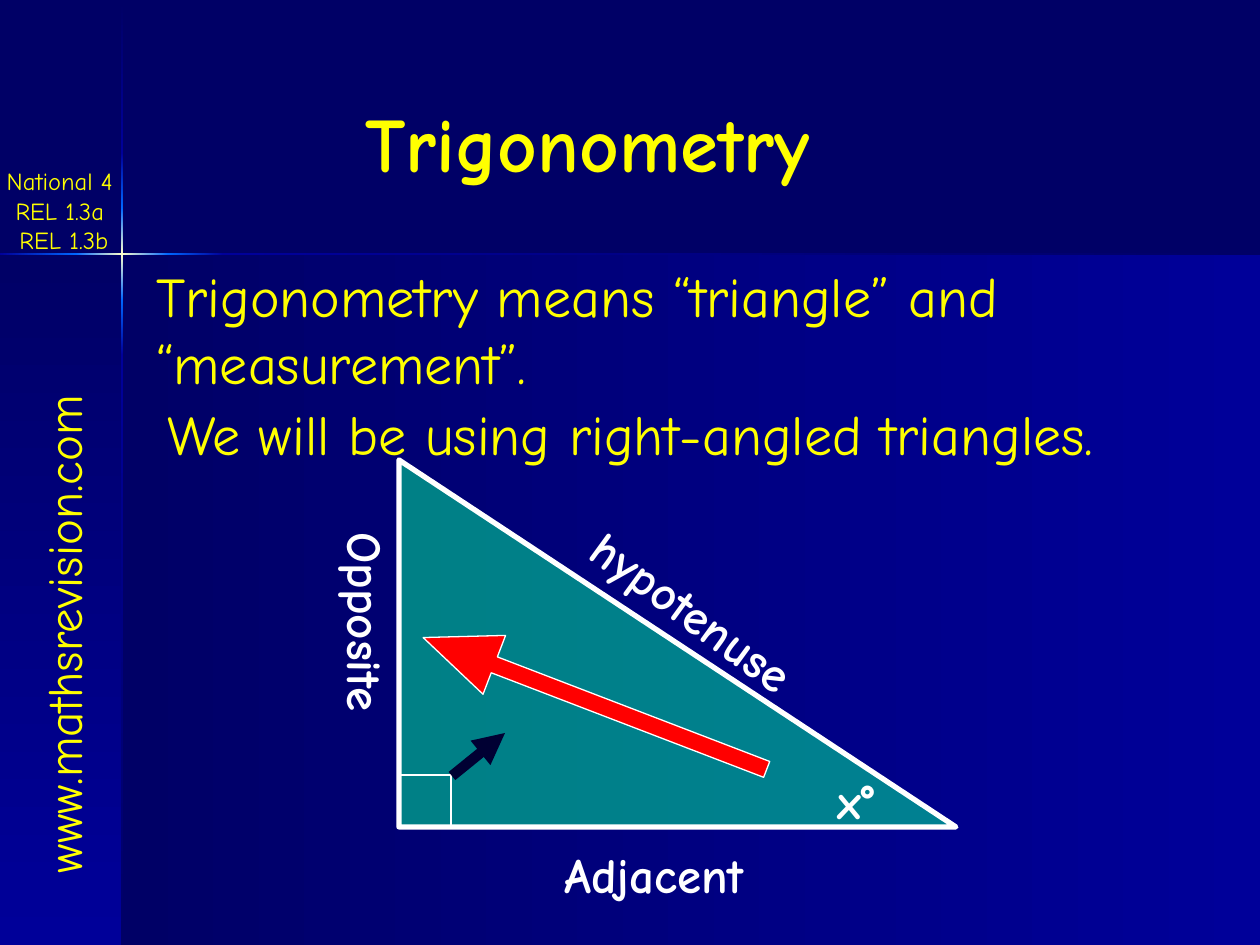
import copy

import pptx
import pptx.dml.color
import pptx.enum.shapes
import pptx.enum.text
import pptx.oxml
import pptx.oxml.ns
import pptx.util

EMU_PER_PX = 914400 / 126
COLORS = {
    "navy": "000066", "blue": "000099", "bright": "0066FF", "glow": "FFFFCC",
    "yellow": "FFFF00", "white": "FFFFFF", "green": "00FF99", "red": "FF0000",
    "ink": "000033",
}
SHAPES = pptx.enum.shapes.MSO_SHAPE
ANCHOR = pptx.enum.text.MSO_ANCHOR
ALIGN = pptx.enum.text.PP_ALIGN
DOWN, ACROSS = 270, 0


def px(*lengths):
    """Turn pixel lengths into EMU."""
    return [pptx.util.Emu(round(length * EMU_PER_PX)) for length in lengths]


def rgb(name):
    """Look up a named colour."""
    return pptx.dml.color.RGBColor.from_string(COLORS[name])


def apply(target, values):
    """Set attributes from a dict of format values."""
    for name, value in values.items():
        setattr(target, name, value)


def add_figure(slide, preset, box, fill=None, outline=None, width=1, rotation=0):
    """Add a preset shape with a plain fill and outline."""
    figure = slide.shapes.add_shape(preset, *px(*box))
    figure.shadow.inherit = False
    figure.rotation = rotation
    if fill:
        figure.fill.solid()
        figure.fill.fore_color.rgb = rgb(fill)
    else:
        figure.fill.background()
    if outline:
        figure.line.color.rgb = rgb(outline)
        figure.line.width = pptx.util.Pt(width)
    else:
        figure.line.fill.background()
    return figure


def add_gradient(slide, box, angle, *names):
    """Add a rectangle with evenly spaced gradient colours."""
    band = add_figure(slide, SHAPES.RECTANGLE, box)
    band.fill.gradient()
    band.fill.gradient_angle = angle
    stops = band._element.spPr.find(".//" + pptx.oxml.ns.qn("a:gsLst"))
    for _ in names[2:]:
        stops.append(copy.deepcopy(stops[0]))
    for index, (stop, name) in enumerate(zip(band.fill.gradient_stops, names)):
        stop.color.rgb = rgb(name)
        stop.position = index / (len(names) - 1)


def add_text(slide, box, lines, size, color="yellow", bold=False, align=ALIGN.LEFT,
             anchor=ANCHOR.TOP, wrap=False, rotation=0, vertical=False):
    """Add a text box with one paragraph for each line."""
    label = slide.shapes.add_textbox(*px(*box))
    label.rotation = rotation
    frame = label.text_frame
    apply(frame, {
        "word_wrap": wrap,
        "auto_size": pptx.enum.text.MSO_AUTO_SIZE.SHAPE_TO_FIT_TEXT,
        "vertical_anchor": anchor,
    })
    if vertical:
        narrow, wide = pptx.util.Inches(0.05), pptx.util.Inches(0.1)
        apply(frame, {"margin_left": narrow, "margin_right": narrow,
                      "margin_top": wide, "margin_bottom": wide})
        frame._txBody.bodyPr.set("vert", "eaVert")
    frame.text = "\n".join(lines)
    for paragraph in frame.paragraphs:
        paragraph.alignment = align
        for run in paragraph.runs:
            apply(run.font, {"name": "Comic Neue", "size": pptx.util.Pt(size), "bold": bold})
            run.font.color.rgb = rgb(color)


def add_side_label(slide, box, words, **options):
    """Add a bold white label to the triangle."""
    add_text(slide, box, [words], 28, "white", bold=True, align=ALIGN.CENTER, **options)


def add_pointer(slide, start, end):
    """Add the thick arrow that leaves the right angle."""
    pointer = slide.shapes.add_connector(
        pptx.enum.shapes.MSO_CONNECTOR.STRAIGHT, *px(*start, *end))
    pointer.line.color.rgb = rgb("ink")
    pointer.line.width = pptx.util.Pt(6)
    head = pptx.oxml.parse_xml(f'<a:tailEnd {pptx.oxml.ns.nsdecls("a")} type="triangle"/>')
    pointer.line._get_or_add_ln().append(head)
    pointer._element.spPr.append(
        pptx.oxml.parse_xml(f'<a:effectLst {pptx.oxml.ns.nsdecls("a")}/>'))


def add_backdrop(slide):
    """Add the panels and the two glowing rules."""
    slide.background.fill.solid()
    slide.background.fill.fore_color.rgb = rgb("navy")
    add_gradient(slide, (122, 255, 1138, 690), ACROSS, "navy", "blue")
    add_gradient(slide, (0, 255, 122, 690), DOWN, "navy", "blue")
    for top, bottom, names in (
        (1, 153, ("navy", "blue")),
        (355, 945, ("blue", "navy")),
        (300, 355, ("bright", "blue")),
        (153, 208, ("blue", "bright")),
        (208, 300, ("bright", "glow", "bright")),
    ):
        add_gradient(slide, (121, top, 2, bottom - top), DOWN, *names)
    for left, right, names in (
        (223, 1260, ("blue", "navy")),
        (0, 76, ("blue", "bright")),
        (168, 223, ("bright", "blue")),
        (76, 168, ("bright", "glow", "bright")),
    ):
        add_gradient(slide, (left, 253, right - left, 2), ACROSS, *names)


def add_triangle(slide):
    """Add the right-angled triangle with its labels and arrows."""
    triangle = add_figure(slide, SHAPES.RIGHT_TRIANGLE, (399, 460, 557, 367),
                          "green", "white", 3)
    tint = triangle._element.spPr.find(".//" + pptx.oxml.ns.qn("a:srgbClr"))
    tint.append(pptx.oxml.parse_xml(
        f'<a:alpha {pptx.oxml.ns.nsdecls("a")} val="50000"/>'))
    add_text(slide, (144, 255, 966, 147),
             ["Trigonometry means “triangle” and “measurement”."], 32, wrap=True)
    add_side_label(slide, (535, 838, 238, 72), "Adjacent", anchor=ANCHOR.MIDDLE)
    add_side_label(slide, (325, 520, 84, 218), "Opposite", anchor=ANCHOR.MIDDLE,
                   vertical=True)
    add_side_label(slide, (814, 764, 84, 72), "x°", anchor=ANCHOR.MIDDLE)
    add_figure(slide, SHAPES.RECTANGLE, (399, 775, 52, 52), outline="white", width=1.5)
    add_side_label(slide, (514, 575, 357, 72), "hypotenuse", wrap=True, rotation=36.1)
    arrow = add_figure(slide, SHAPES.LEFT_ARROW, (411, 672, 368, 63),
                       "red", "white", 0.75, rotation=21)
    arrow.adjustments[0], arrow.adjustments[1] = 0.27, 1.21
    add_pointer(slide, (452, 776), (505, 733))


def main():
    """Build and save the slide."""
    deck = pptx.Presentation()
    deck.slide_width, deck.slide_height = px(1260, 945)
    slide = deck.slides.add_slide(deck.slide_layouts[6])
    add_backdrop(slide)
    add_text(slide, (-213, 573, 553, 72), ["www.mathsrevision.com"], 28, rotation=270)
    add_text(slide, (353, 89, 518, 106), ["Trigonometry"], 44, bold=True, wrap=True)
    add_text(slide, (-11, 160, 150, 101), ["National 4 ", "REL 1.3a ", "REL 1.3b"], 14,
             align=ALIGN.CENTER)
    add_triangle(slide)
    add_text(slide, (155, 393, 1071, 81),
             ["We will be using right-angled triangles."], 32, wrap=True)
    deck.save("out.pptx")


if __name__ == "__main__":
    main()
